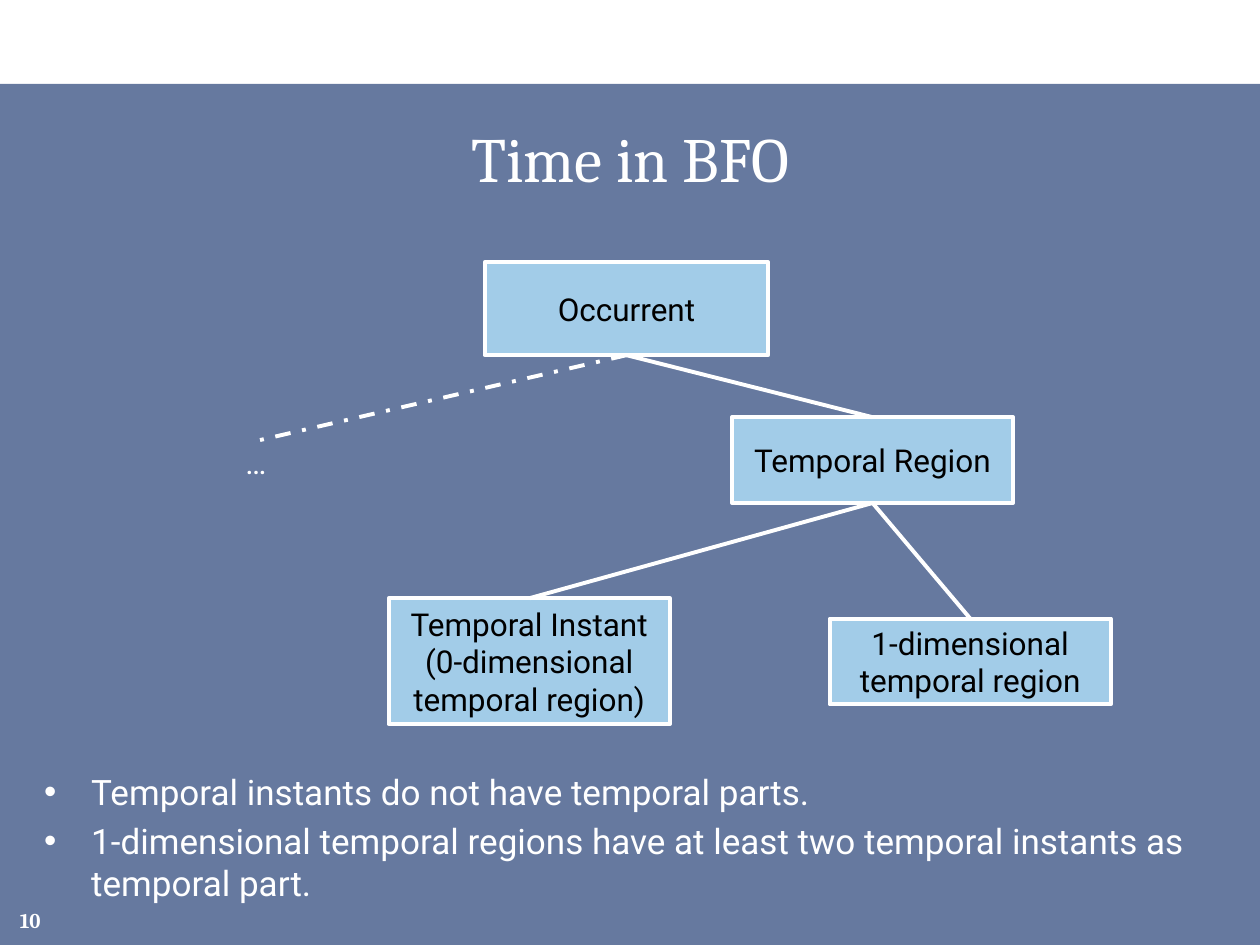
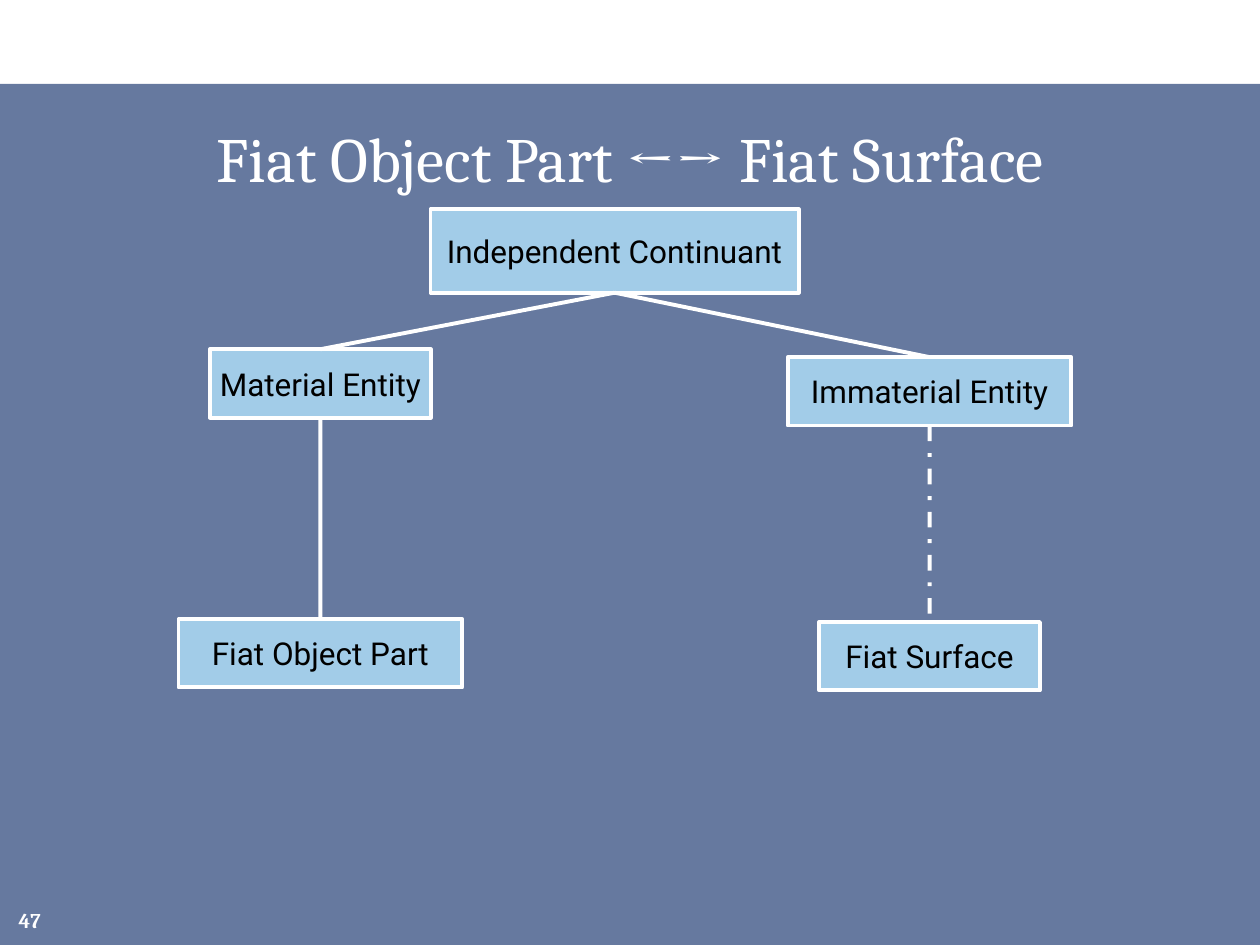
from dataclasses import dataclass

from lxml.etree import SubElement
from pptx import Presentation
from pptx.dml.color import RGBColor
from pptx.enum.dml import MSO_LINE
from pptx.enum.shapes import MSO_CONNECTOR, MSO_SHAPE
from pptx.enum.text import MSO_ANCHOR, PP_ALIGN
from pptx.oxml.ns import qn
from pptx.util import Cm, Pt

TOP, BOTTOM = 0, 2


@dataclass(frozen=True)
class Theme:
    white: RGBColor = RGBColor(0xFF, 0xFF, 0xFF)
    black: RGBColor = RGBColor(0, 0, 0)
    navy: RGBColor = RGBColor(0x00, 0x20, 0x60)
    node: RGBColor = RGBColor(0xA2, 0xCC, 0xE8)
    band_opacity: int = 60
    serif: str = "Cambria"
    sans: str = "Roboto"
    title_size: int = 36
    body_size: int = 20
    node_size: int = 18
    number_size: int = 12
    line_width: float = 2.25


def set_bullet(p, indent):
    pPr = p._p.get_or_add_pPr()
    pPr.set("marL", str(indent))
    pPr.set("indent", str(-indent))
    SubElement(pPr, qn("a:buFont"), typeface="Arial")
    SubElement(pPr, qn("a:buChar"), char="•")


def write(sp, text, *, font, size, color, bold=False, align=PP_ALIGN.CENTER,
          anchor=MSO_ANCHOR.MIDDLE, wrap=True, gap=0, bullet_indent=None):
    """Fill a shape with text, one paragraph per line."""
    tf = sp.text_frame
    tf.word_wrap = wrap
    tf.vertical_anchor = anchor
    for i, line in enumerate(text.split("\n")):
        p = tf.paragraphs[0] if i == 0 else tf.add_paragraph()
        p.alignment = align
        if i and gap:
            p.space_before = Pt(gap)
        if bullet_indent:
            set_bullet(p, bullet_indent)
        r = p.add_run()
        r.text = line
        r.font.name = font
        r.font.size = Pt(size)
        r.font.bold = bold
        r.font.color.rgb = color


class Deck:
    def __init__(self, prs, theme):
        self.prs, self.theme, self.s = prs, theme, None

    def slide(self, title, number):
        """Start a slide with its band, title and page number."""
        t = self.theme
        self.s = self.prs.slides.add_slide(self.prs.slide_layouts[6])
        self.band()
        self.text(title, 0.64, 2.11, 24.13, 2.11, font=t.serif, size=t.title_size)
        self.text(str(number), -0.2, 18.03, 1.27, 1.02, font=t.serif,
                  size=t.number_size, bold=True, align=PP_ALIGN.RIGHT)

    def rect(self, left, top, width, height, fill):
        sp = self.s.shapes.add_shape(MSO_SHAPE.RECTANGLE, Cm(left), Cm(top),
                                     Cm(width), Cm(height))
        sp.shadow.inherit = False
        sp.fill.solid()
        sp.fill.fore_color.rgb = fill
        return sp

    def band(self):
        sp = self.rect(0, 1.69, 25.4, 17.36, self.theme.navy)
        sp.line.fill.background()
        color = sp._element.spPr.find(qn("a:solidFill"))[0]
        SubElement(color, qn("a:alpha"), val=str(self.theme.band_opacity * 1000))

    def text(self, text, left, top, width, height, **fmt):
        sp = self.s.shapes.add_textbox(Cm(left), Cm(top), Cm(width), Cm(height))
        write(sp, text, color=self.theme.white, **fmt)
        return sp

    def bullets(self, text, left, top, width, height):
        t = self.theme
        self.text(text, left, top, width, height, font=t.sans, size=t.body_size,
                  align=PP_ALIGN.LEFT, anchor=MSO_ANCHOR.TOP, gap=4,
                  bullet_indent=Cm(0.95))

    def node(self, text, center, top, width, height):
        """Place a class box, centred horizontally on center."""
        t = self.theme
        sp = self.rect(center - width / 2, top, width, height, t.node)
        sp.line.color.rgb = t.white
        sp.line.width = Pt(t.line_width)
        write(sp, text, font=t.sans, size=t.node_size, color=t.black, wrap=False)
        return sp

    def ellipsis(self, center, top, width, height):
        t = self.theme
        return self.text("…", center - width / 2, top, width, height,
                         font=t.sans, size=t.node_size, wrap=False)

    def link(self, parent, child, dashed=False):
        """Join the bottom of parent to the top of child."""
        line = self.s.shapes.add_connector(MSO_CONNECTOR.STRAIGHT, 0, 0, 0, 0)
        line.begin_connect(parent, BOTTOM)
        line.end_connect(child, TOP)
        line.line.color.rgb = self.theme.white
        line.line.width = Pt(self.theme.line_width)
        if dashed:
            line.line.dash_style = MSO_LINE.DASH_DOT
        SubElement(line._element.spPr, qn("a:effectLst"))


def time_slide(deck):
    deck.slide("Time in BFO", 10)
    deck.bullets("Temporal instants do not have temporal parts.\n"
                 "1-dimensional temporal regions have at least two temporal "
                 "instants as temporal part.", 0.64, 15.4, 24.13, 3.02)
    width, height = 5.67, 1.73
    occurrent = deck.node("Occurrent", 12.63, 5.29, 5.72, 1.87)
    others = deck.ellipsis(5.16, 8.89, 3.96, 0.84)
    region = deck.node("Temporal Region", 17.59, 8.41, width, height)
    instant = deck.node("Temporal Instant\n(0-dimensional\ntemporal region)",
                        10.67, 12.06, width, 2.54)
    interval = deck.node("1-dimensional\ntemporal region", 19.56, 12.47, width, height)
    deck.link(occurrent, others, dashed=True)
    deck.link(occurrent, region)
    deck.link(region, instant)
    deck.link(region, interval)


def fiat_slide(deck):
    deck.slide("Fiat Object Part ←→ Fiat Surface", 47)
    left, right = 6.46, 18.74
    narrow, wide, height = 4.45, 5.72, 1.38
    continuant = deck.node("Independent Continuant", 12.39, 4.22, 7.42, 1.68)
    material = deck.node("Material Entity", left, 7.04, narrow, height)
    immaterial = deck.node("Immaterial Entity", right, 7.2, wide, height)
    part = deck.node("Fiat Object Part", left, 12.48, wide, height)
    surface = deck.node("Fiat Surface", right, 12.54, narrow, height)
    deck.link(continuant, material)
    deck.link(continuant, immaterial)
    deck.link(material, part)
    deck.link(immaterial, surface, dashed=True)


def main():
    prs = Presentation()
    prs.slide_width, prs.slide_height = Cm(25.4), Cm(19.05)
    deck = Deck(prs, Theme())
    time_slide(deck)
    fiat_slide(deck)
    prs.save("out.pptx")


if __name__ == "__main__":
    main()
